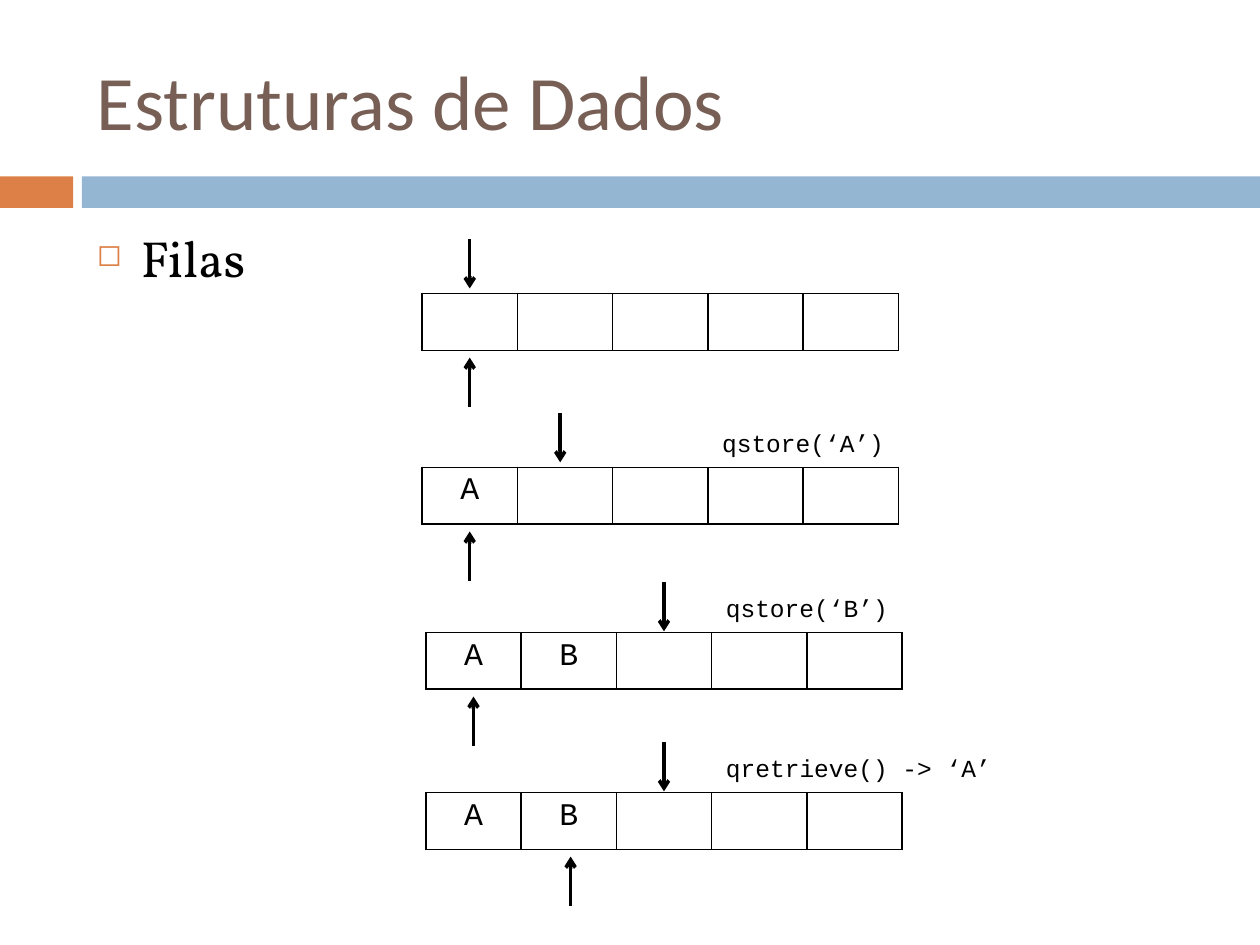
"""Build the queue slide: four states of a five-cell queue with its pointers."""
from dataclasses import dataclass

from lxml import etree
from pptx import Presentation
from pptx.dml.color import RGBColor
from pptx.enum.shapes import MSO_CONNECTOR, MSO_SHAPE
from pptx.enum.text import MSO_ANCHOR, PP_ALIGN
from pptx.oxml.ns import qn
from pptx.util import Inches, Pt

STRAIGHT = MSO_CONNECTOR.STRAIGHT
RECTANGLE = MSO_SHAPE.RECTANGLE
MIDDLE, TOP = MSO_ANCHOR.MIDDLE, MSO_ANCHOR.TOP
CENTER = PP_ALIGN.CENTER

BLACK = RGBColor(0x00, 0x00, 0x00)
ORANGE = RGBColor(0xDD, 0x80, 0x47)
BLUE = RGBColor(0x94, 0xB6, 0xD2)
BROWN = RGBColor(0x77, 0x5F, 0x55)

SLIDE_W, SLIDE_H = 10, 7.5
CELLS = 5
COL, ROW = 3.78 / CELLS, 0.45
ARROW_ROWS = 0.87
TAIL_ROW = 1.13
LABEL_COL, LABEL_ROW = 3.02, -0.8


@dataclass(frozen=True)
class Queue:
    """One queue state; pointers are in columns, the gap above in rows."""
    left: float
    top: float
    items: str
    store_col: float
    retrieve_col: float
    gap: float
    label: str = ""
    label_w: float = 1.5

    def at(self, col: float, row: float) -> tuple[int, int]:
        return Inches(self.left + col * COL), Inches(self.top + row * ROW)


QUEUES = (
    Queue(3.35, 2.33, "", 0.5, 0.5, 0.09),
    Queue(3.35, 3.71, "A", 1.45, 0.5, 0.09, "qstore(‘A’)"),
    Queue(3.38, 5.02, "AB", 2.5, 0.5, 0.02, "qstore(‘B’)"),
    Queue(3.38, 6.29, "AB", 2.5, 1.52, 0.02, "qretrieve() -> ‘A’", 2.32),
)


def set_font(p, name: str, size: float, color: RGBColor) -> None:
    """Set the font of a whole paragraph."""
    p.font.name, p.font.size = name, Pt(size)
    p.font.color.rgb = color


def add_bar(s, left: float, width: float, color: RGBColor) -> None:
    """Draw one part of the band below the title."""
    sp = s.shapes.add_shape(RECTANGLE, Inches(left), Inches(1.4), Inches(width), Inches(0.25))
    sp.shadow.inherit = False
    sp.fill.solid()
    sp.fill.fore_color.rgb = color
    sp.line.fill.background()


def add_text(s, box: tuple, text: str, name: str, size: float, color: RGBColor,
             anchor=TOP, wrap: bool = True):
    """Add a one-paragraph text box and return the paragraph."""
    tf = s.shapes.add_textbox(*box).text_frame
    tf.word_wrap, tf.vertical_anchor = wrap, anchor
    p = tf.paragraphs[0]
    p.text = text
    set_font(p, name, size, color)
    return p


def add_bullet(p) -> None:
    """Give a paragraph a hanging square bullet."""
    p.space_before = Pt(7)
    pPr = p.font._element.getparent()
    pPr.set("marL", str(Inches(0.35)))
    pPr.set("indent", str(-Inches(0.35)))
    defRPr = pPr.find(qn("a:defRPr"))
    color = etree.Element(qn("a:buClr"))
    etree.SubElement(color, qn("a:srgbClr"), val=str(ORANGE))
    for bullet in (color, etree.Element(qn("a:buSzPct"), val="60000"),
                   etree.Element(qn("a:buChar"), char="◻")):
        defRPr.addprevious(bullet)


def add_arrow(s, start: tuple[int, int], end: tuple[int, int]) -> None:
    """Draw a hairline arrow."""
    line = s.shapes.add_connector(STRAIGHT, *start, *end)
    line.line.color.rgb = BLACK
    line.line.width = Pt(0)
    etree.SubElement(line.line._get_or_add_ln(), qn("a:tailEnd"), type="arrow")
    etree.SubElement(line._element.spPr, qn("a:effectLst"))


def add_borders(cell) -> None:
    """Frame a cell with thin black lines."""
    tcPr = cell._tc.get_or_add_tcPr()
    for i, side in enumerate(("lnL", "lnR", "lnT", "lnB")):
        ln = etree.Element(qn(f"a:{side}"), w=str(Pt(1)))
        fill = etree.SubElement(ln, qn("a:solidFill"))
        etree.SubElement(fill, qn("a:srgbClr"), val=str(BLACK))
        tcPr.insert(i, ln)


def add_queue(s, queue: Queue) -> None:
    """Draw a queue with its two pointers and its call."""
    table = s.shapes.add_table(1, CELLS, *queue.at(0, 0), Inches(CELLS * COL), Inches(ROW)).table
    table.first_row = table.horz_banding = False
    for cell, item in zip(table.iter_cells(), queue.items.ljust(CELLS)):
        cell.fill.background()
        add_borders(cell)
        p = cell.text_frame.paragraphs[0]
        p.text = item.strip()
        p.alignment = CENTER
        set_font(p, "Courier New", 18, BLACK)
    add_arrow(s, queue.at(queue.store_col, -queue.gap - ARROW_ROWS),
              queue.at(queue.store_col, -queue.gap))
    add_arrow(s, queue.at(queue.retrieve_col, TAIL_ROW + ARROW_ROWS),
              queue.at(queue.retrieve_col, TAIL_ROW))
    if queue.label:
        box = (*queue.at(LABEL_COL, LABEL_ROW), Inches(queue.label_w), Inches(0.32))
        add_text(s, box, queue.label, "Courier New", 14, BLACK, wrap=False)


def main() -> None:
    """Build and save the slide."""
    prs = Presentation()
    prs.slide_width, prs.slide_height = Inches(SLIDE_W), Inches(SLIDE_H)
    s = prs.slides.add_slide(prs.slide_layouts[6])
    add_bar(s, 0, 0.58, ORANGE)
    add_bar(s, 0.65, SLIDE_W - 0.65, BLUE)
    left, width = Inches(0.67), Inches(8.92)
    add_text(s, (left, Inches(0.25), width, Inches(1.08)), "Estruturas de Dados",
             "Calibri", 44, BROWN, MIDDLE)
    add_bullet(add_text(s, (left, Inches(1.75), width, Inches(5.23)), "Filas",
                        "Vollkorn", 29, BLACK))
    for queue in QUEUES:
        add_queue(s, queue)
    prs.save("out.pptx")


if __name__ == "__main__":
    main()
